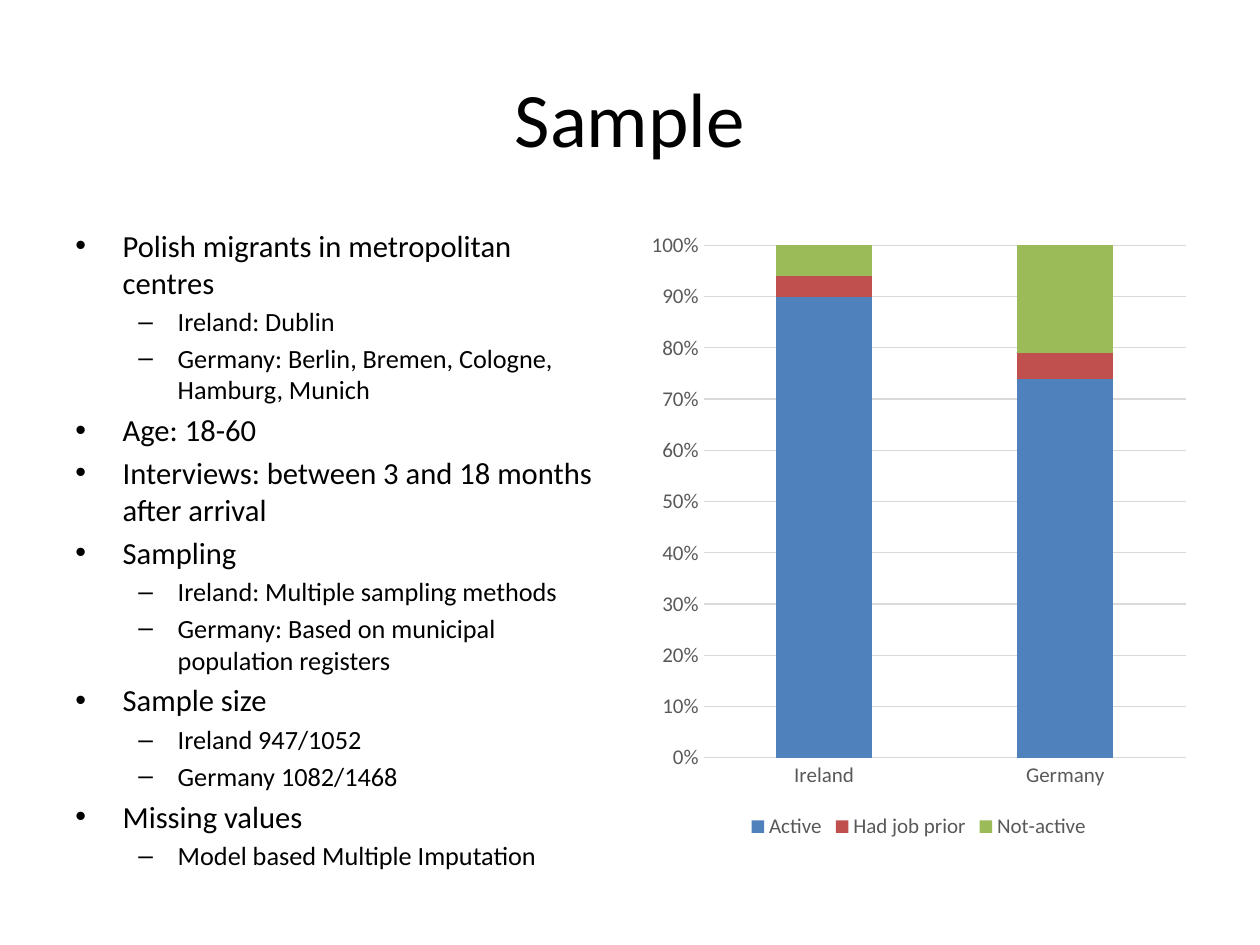
from lxml.etree import SubElement
from pptx import Presentation
from pptx.chart.data import CategoryChartData
from pptx.dml.color import RGBColor
from pptx.enum.chart import XL_CHART_TYPE, XL_LEGEND_POSITION, XL_TICK_MARK
from pptx.enum.text import MSO_ANCHOR, PP_ALIGN
from pptx.oxml.ns import qn
from pptx.util import Pt

# Content
TITLE = "Sample"
OUTLINE = [
    (0, "Polish migrants in metropolitan centres"),
    (1, "Ireland: Dublin"),
    (1, "Germany: Berlin, Bremen, Cologne, Hamburg, Munich"),
    (0, "Age: 18-60"),
    (0, "Interviews: between 3 and 18 months after arrival"),
    (0, "Sampling"),
    (1, "Ireland: Multiple sampling methods"),
    (1, "Germany: Based on municipal population registers"),
    (0, "Sample size"),
    (1, "Ireland 947/1052"),
    (1, "Germany 1082/1468"),
    (0, "Missing values"),
    (1, "Model based Multiple Imputation"),
]
COUNTRIES = ["Ireland", "Germany"]
SERIES = [
    ("Active", (90, 74), "4F81BD"),
    ("Had job prior", (4, 5), "C0504D"),
    ("Not-active", (6, 21), "9BBB59"),
]

# Format and layout, in points
FONT, BLACK, GREY, LINE = "Calibri", "000000", "595959", "D9D9D9"
LEVELS = [
    {"size": 17.5, "bullet": "•", "left": 27, "hanging": 27},
    {"size": 15, "bullet": "–", "left": 58.5, "hanging": 22.5},
]
WIDTH, HEIGHT, MARGIN = 720, 540, 36
COLUMN_WIDTH, COLUMN_TOP, COLUMN_HEIGHT = 318, 126, 356.4


def color(value):
    return RGBColor.from_string(value)


def set_attributes(target, values):
    for name, value in values.items():
        setattr(target, name, value)


def set_font(font, size, value):
    set_attributes(font, {"name": FONT, "size": Pt(size)})
    font.color.rgb = color(value)


def set_line(line, value):
    line.color.rgb = color(value)
    line.width = Pt(0.75)


def add_text(slide, box, anchor):
    frame = slide.shapes.add_textbox(*map(Pt, box)).text_frame
    set_attributes(frame, {"word_wrap": True, "vertical_anchor": anchor})
    return frame


def fill_paragraph(paragraph, text, size):
    run = paragraph.add_run()
    run.text = text
    set_font(run.font, size, BLACK)


def set_bullet(paragraph, level):
    properties = paragraph._p.get_or_add_pPr()
    properties.set("marL", str(Pt(level["left"])))
    properties.set("indent", str(-Pt(level["hanging"])))
    SubElement(properties, qn("a:buFont"), typeface="Arial")
    SubElement(properties, qn("a:buChar"), char=level["bullet"])


def add_outline(slide, box):
    frame = add_text(slide, box, MSO_ANCHOR.TOP)
    for index, (depth, text) in enumerate(OUTLINE):
        paragraph = frame.add_paragraph() if index else frame.paragraphs[0]
        level = LEVELS[depth]
        set_attributes(paragraph, {"level": depth, "space_before": Pt(level["size"] * 0.2)})
        set_bullet(paragraph, level)
        fill_paragraph(paragraph, text, level["size"])


def add_activity_chart(slide, box):
    data = CategoryChartData()
    data.categories = COUNTRIES
    for name, values, _ in SERIES:
        data.add_series(name, values)
    chart = slide.shapes.add_chart(
        XL_CHART_TYPE.COLUMN_STACKED_100, *map(Pt, box), data
    ).chart
    set_font(chart.font, 10, BLACK)
    set_attributes(chart, {"has_title": False, "has_legend": True})

    # Columns
    plot = chart.plots[0]
    set_attributes(plot, {"gap_width": 150, "overlap": 100, "vary_by_categories": False})
    for series, (_, _, fill) in zip(plot.series, SERIES):
        series.format.fill.solid()
        series.format.fill.fore_color.rgb = color(fill)

    # Axes
    for axis in (chart.category_axis, chart.value_axis):
        set_attributes(axis, {"major_tick_mark": XL_TICK_MARK.NONE,
                              "minor_tick_mark": XL_TICK_MARK.NONE})
        set_font(axis.tick_labels.font, 12, GREY)
    set_line(chart.category_axis.format.line, LINE)
    chart.value_axis.format.line.fill.background()
    set_line(chart.value_axis.major_gridlines.format.line, LINE)
    set_attributes(chart.value_axis.tick_labels,
                   {"number_format": "0%", "number_format_is_linked": False})

    # Legend
    set_attributes(chart.legend, {"position": XL_LEGEND_POSITION.BOTTOM,
                                  "include_in_layout": False})
    set_font(chart.legend.font, 12, GREY)


def main():
    presentation = Presentation()
    set_attributes(presentation, {"slide_width": Pt(WIDTH), "slide_height": Pt(HEIGHT)})
    slide = presentation.slides.add_slide(presentation.slide_layouts[6])

    # Title
    title_box = (MARGIN, 21.6, WIDTH - 2 * MARGIN, 90)
    title = add_text(slide, title_box, MSO_ANCHOR.MIDDLE).paragraphs[0]
    title.alignment = PP_ALIGN.CENTER
    fill_paragraph(title, TITLE, 44)

    # Two columns
    chart_left = WIDTH - MARGIN - COLUMN_WIDTH
    add_outline(slide, (MARGIN, COLUMN_TOP, COLUMN_WIDTH, COLUMN_HEIGHT))
    add_activity_chart(slide, (chart_left, COLUMN_TOP, COLUMN_WIDTH, COLUMN_HEIGHT))

    presentation.save("out.pptx")


if __name__ == "__main__":
    main()
